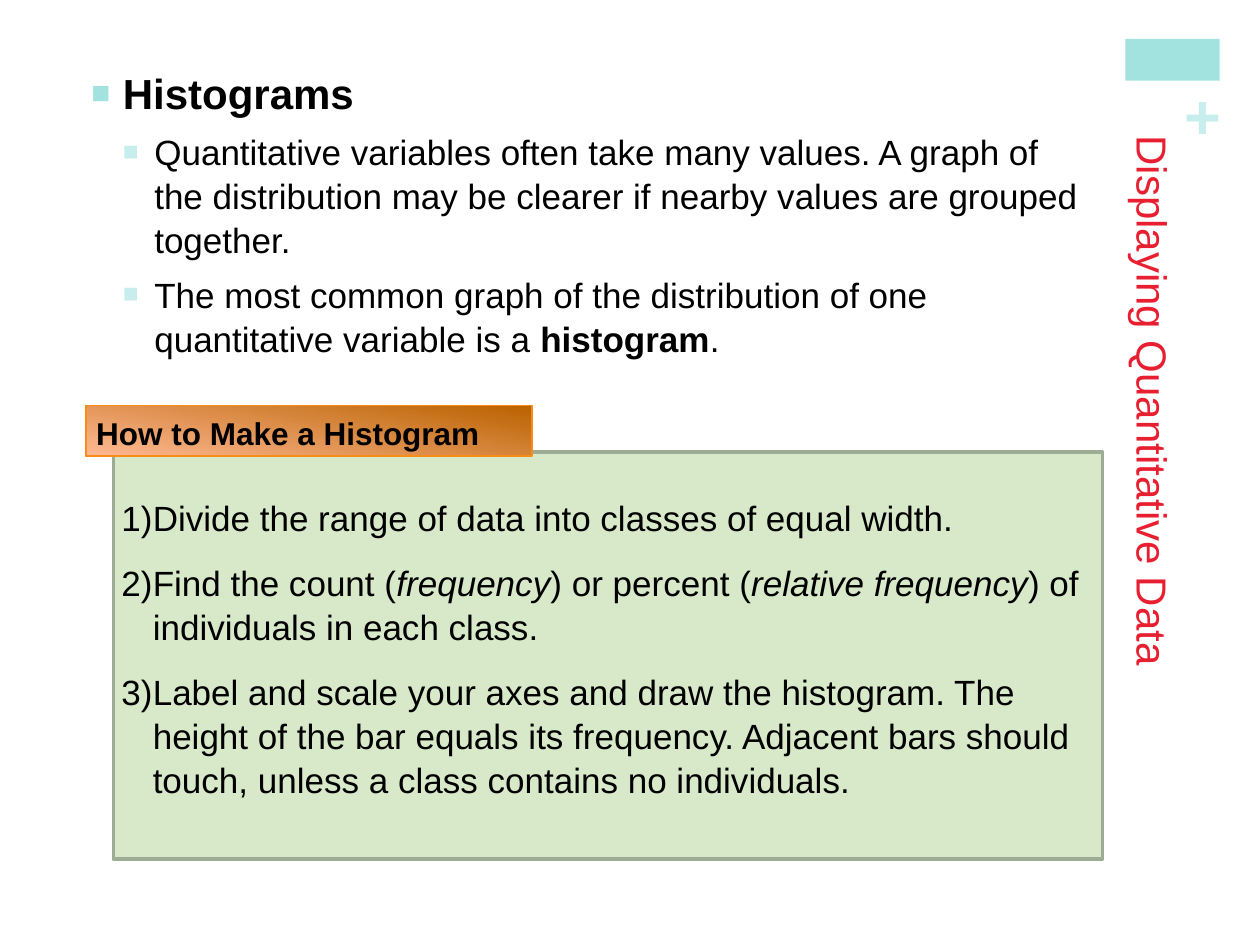
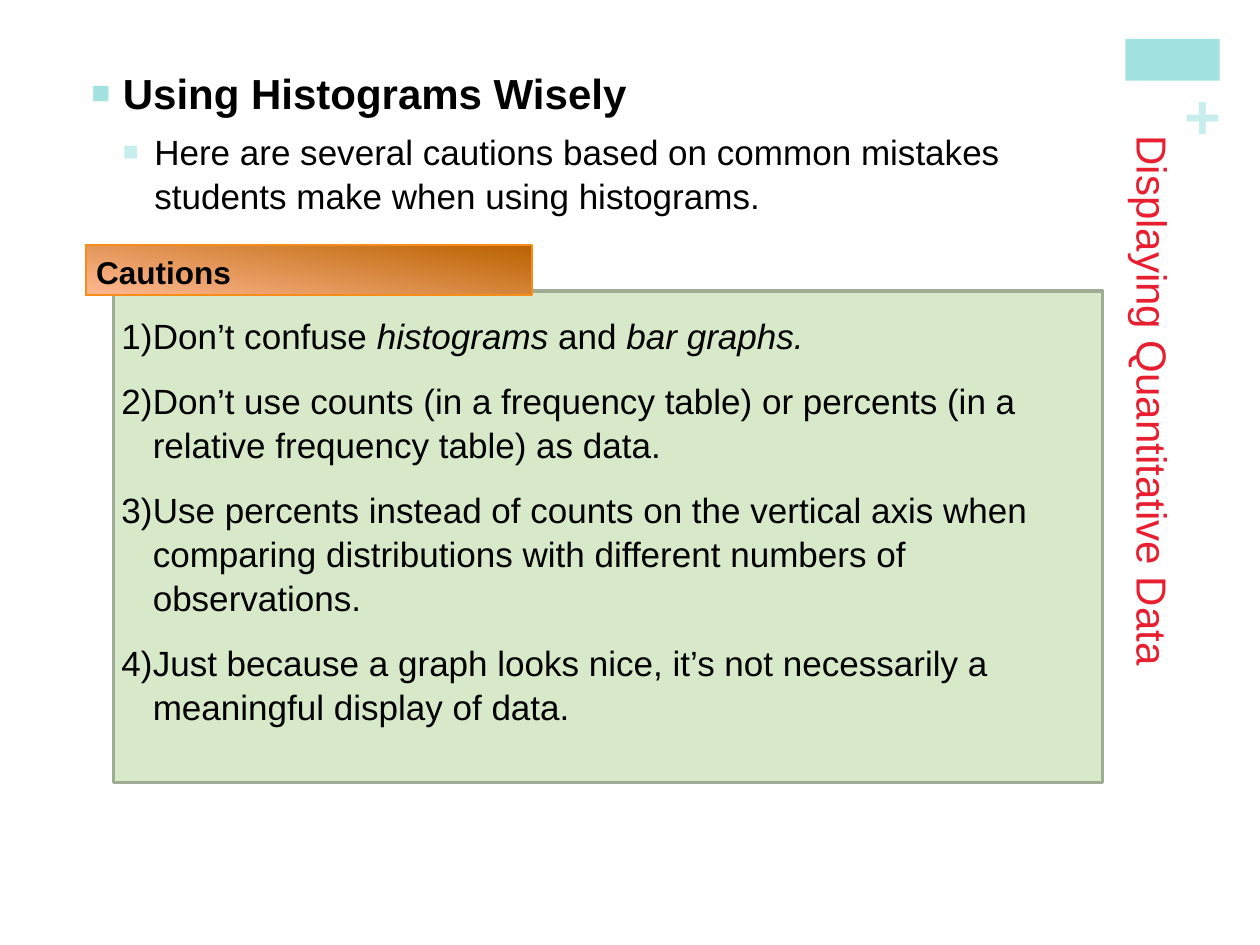
from dataclasses import dataclass

from lxml.etree import SubElement
from pptx import Presentation
from pptx.dml.color import RGBColor
from pptx.enum.shapes import MSO_SHAPE as Shape
from pptx.enum.text import MSO_ANCHOR as Anchor, PP_ALIGN as Align
from pptx.oxml.ns import qn
from pptx.util import Pt


@dataclass(frozen=True)
class Theme:
    font: str = "Arial"
    ink: str = "000000"
    title: str = "E81F30"
    aqua: str = "A2E3DF"
    pale_aqua: str = "C7EEEC"
    panel: str = "D7E9C9"
    panel_edge: str = "9FAC95"
    tab_dark: str = "BA6200"
    tab_light: str = "FFB993"
    tab_edge: str = "F78D18"
    heading_size: int = 24
    body_size: int = 20
    tab_size: int = 18
    plus_size: int = 36
    line_spacing: float = 1.05


class Deck:
    def __init__(self, theme):
        self.theme = theme
        self.presentation = Presentation()
        self.presentation.slide_width = Pt(720)
        self.presentation.slide_height = Pt(540)
        self.slide = None

    def new_slide(self):
        self.slide = self.presentation.slides.add_slide(self.presentation.slide_layouts[6])
        self.rectangle(643, 22.3, 54, 23.8, self.theme.aqua)
        plus = self.text_box(677, 44, 20, 44, (0, 0, 0, 0))
        plus.word_wrap = False
        self.fill_text(plus.paragraphs[0], "+", self.theme.plus_size, self.theme.pale_aqua, bold=True)

    def rectangle(self, left, top, width, height, fill=None, edge=None, edge_width=1):
        box = self.slide.shapes.add_shape(Shape.RECTANGLE, Pt(left), Pt(top), Pt(width), Pt(height))
        box.shadow.inherit = False
        if fill:
            box.fill.solid()
            box.fill.fore_color.rgb = RGBColor.from_string(fill)
        if edge:
            box.line.color.rgb = RGBColor.from_string(edge)
            box.line.width = Pt(edge_width)
        else:
            box.line.fill.background()
        return box

    def text_box(self, left, top, width, height, margins):
        box = self.slide.shapes.add_textbox(Pt(left), Pt(top), Pt(width), Pt(height))
        return self.frame(box, margins)

    def frame(self, box, margins, anchor=Anchor.TOP):
        frame = box.text_frame
        frame.word_wrap = True
        frame.vertical_anchor = anchor
        (frame.margin_left, frame.margin_top,
         frame.margin_right, frame.margin_bottom) = map(Pt, margins)
        return frame

    def fill_text(self, paragraph, text, size, color=None, bold=False, emphasis="italic"):
        paragraph.alignment = Align.LEFT
        font = paragraph.font
        font.name = self.theme.font
        font.size = Pt(size)
        font.bold = bold
        font.color.rgb = RGBColor.from_string(color or self.theme.ink)
        for index, part in enumerate(text.split("*")):
            if part:
                run = paragraph.add_run()
                run.text = part
                if index % 2:
                    setattr(run.font, emphasis, True)

    def paragraphs(self, frame, count):
        for _ in range(count - 1):
            frame.add_paragraph()
        for paragraph in frame.paragraphs:
            paragraph.line_spacing = self.theme.line_spacing
        return frame.paragraphs

    def hanging(self, paragraph, indent, marker, **attributes):
        properties = paragraph._p.get_or_add_pPr()
        properties.set("marL", str(Pt(indent)))
        properties.set("indent", str(-Pt(18)))
        bullet = SubElement(properties, qn(marker), attributes)
        default_font = properties.find(qn("a:defRPr"))
        if default_font is not None:
            default_font.addprevious(bullet)
        return bullet

    def square_bullet(self, paragraph, indent, color):
        bullet = self.hanging(paragraph, indent, "a:buChar", char="■")
        properties = bullet.getparent()
        tint = SubElement(properties, qn("a:buClr"))
        SubElement(tint, qn("a:srgbClr"), val=color)
        scale = SubElement(properties, qn("a:buSzPct"), val="75000")
        typeface = SubElement(properties, qn("a:buFont"), typeface=self.theme.font)
        for part in (tint, scale, typeface):
            bullet.addprevious(part)

    def side_title(self, text):
        frame = self.text_box(629.3, 75, 53.3, 407.5, (3.6, 2.5, 9, 3.6))
        frame._txBody.bodyPr.set("vert", "eaVert")
        self.fill_text(frame.paragraphs[0], text, self.theme.heading_size, self.theme.title)

    def outline(self, height, heading, points):
        frame = self.text_box(48.6, 28.5, 581, height, (3.6, 8.5, 7.2, 3.6))
        first, *rest = self.paragraphs(frame, 1 + len(points))
        self.fill_text(first, heading, self.theme.heading_size, bold=True)
        self.square_bullet(first, 18, self.theme.aqua)
        for paragraph, point in zip(rest, points):
            paragraph.space_before = Pt(6)
            self.fill_text(paragraph, point, self.theme.body_size, emphasis="bold")
            self.square_bullet(paragraph, 36, self.theme.pale_aqua)

    def panel(self, top, height, label, steps, text_inset):
        theme = self.theme
        card = self.rectangle(64.8, top, 565.2, height, theme.panel, theme.panel_edge, 2)
        frame = self.frame(card, (4.5, text_inset, 7.2, 3.6))
        for paragraph, step in zip(self.paragraphs(frame, len(steps)), steps):
            paragraph.space_after = Pt(12)
            self.fill_text(paragraph, step, theme.body_size)
            self.hanging(paragraph, 18, "a:buAutoNum", type="arabicParenR")
        self.tab(top - 26.6, label)

    def tab(self, top, label):
        theme = self.theme
        tab = self.rectangle(49, top, 255, 29, edge=theme.tab_edge)
        tab.fill.gradient()
        tab.fill.gradient_angle = 260
        for stop, color in zip(tab.fill.gradient_stops, (theme.tab_dark, theme.tab_light)):
            stop.color.rgb = RGBColor.from_string(color)
        frame = self.frame(tab, (6, 6, 6, 3.6), Anchor.MIDDLE)
        self.fill_text(frame.paragraphs[0], label, theme.tab_size, bold=True)


def main():
    deck = Deck(Theme())
    section = "Displaying Quantitative Data"

    deck.new_slide()
    deck.side_title(section)
    deck.outline(171.4, "Histograms", [
        "Quantitative variables often take many values. A graph of the distribution "
        "may be clearer if nearby values are grouped together.",
        "The most common graph of the distribution of one quantitative variable is a *histogram*.",
    ])
    deck.panel(258.4, 232.6, "How to Make a Histogram", [
        "Divide the range of data into classes of equal width.",
        "Find the count (*frequency*) or percent (*relative frequency*) of individuals in each class.",
        "Label and scale your axes and draw the histogram. The height of the bar equals its "
        "frequency. Adjacent bars should touch, unless a class contains no individuals.",
    ], text_inset=24)

    deck.new_slide()
    deck.side_title(section)
    deck.outline(108.7, "Using Histograms Wisely", [
        "Here are several cautions based on common mistakes students make when using histograms.",
    ])
    deck.panel(166.4, 280.8, "Cautions", [
        "Don’t confuse *histograms *and *bar graphs.*",
        "Don’t use counts (in a frequency table) or percents (in a relative frequency table) as data.",
        "Use percents instead of counts on the vertical axis when comparing distributions "
        "with different numbers of observations.",
        "Just because a graph looks nice, it’s not necessarily a meaningful display of data.",
    ], text_inset=12)

    deck.presentation.save("out.pptx")


if __name__ == "__main__":
    main()
